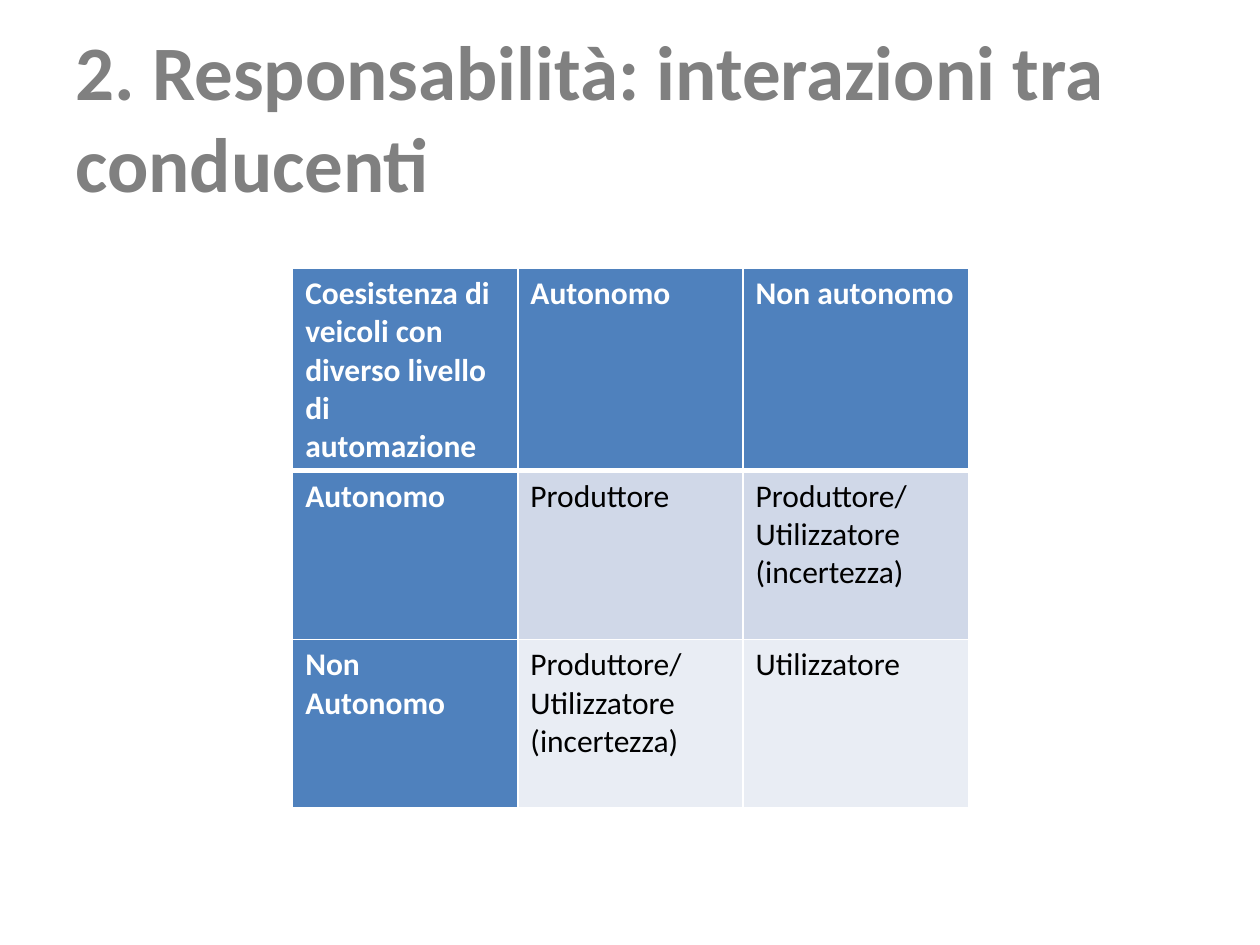
from dataclasses import dataclass

from lxml import etree
from pptx import Presentation
from pptx.dml.color import RGBColor
from pptx.enum.text import MSO_ANCHOR
from pptx.oxml.ns import qn
from pptx.util import Cm, Pt

MIDDLE = MSO_ANCHOR.MIDDLE

# Content
TITLE = "2. Responsabilità: interazioni tra conducenti"
ROWS = [
    ["Coesistenza di veicoli con diverso livello di automazione", "Autonomo", "Non autonomo"],
    ["Autonomo", "Produttore", "Produttore/\nUtilizzatore (incertezza)"],
    ["Non Autonomo", "Produttore/Utilizzatore (incertezza)", "Utilizzatore"],
]
COL_WIDTH = 4.54
ROW_HEIGHTS = [4.09, 3.4, 3.4]


@dataclass(frozen=True)
class Theme:
    font: str = "Calibri"
    title_size: int = 44
    cell_size: int = 18
    title: str = "808080"
    header_fill: str = "4F81BD"
    header_text: str = "FFFFFF"
    body_text: str = "000000"
    bands: tuple = ("D0D8E8", "E9EDF4")
    border: str = "FFFFFF"
    thin: int = 1
    thick: int = 3


THEME = Theme()


def format_text(tf, size, color, bold):
    for p in tf.paragraphs:
        for r in p.runs:
            r.font.name = THEME.font
            r.font.size = Pt(size)
            r.font.bold = bold
            r.font.color.rgb = RGBColor.from_string(color)


def set_borders(cell, top, bottom):
    tcPr = cell._tc.get_or_add_tcPr()
    widths = {"a:lnL": THEME.thin, "a:lnR": THEME.thin, "a:lnT": top, "a:lnB": bottom}
    for tag, width in widths.items():
        ln = etree.SubElement(tcPr, qn(tag), w=str(Pt(width)))
        fill = etree.SubElement(ln, qn("a:solidFill"))
        etree.SubElement(fill, qn("a:srgbClr"), val=THEME.border)


def add_title(s):
    sp = s.shapes.add_textbox(Cm(1.27), Cm(0.76), Cm(22.83), Cm(3.15))
    tf = sp.text_frame
    tf.word_wrap = True
    tf.vertical_anchor = MIDDLE
    tf.text = TITLE
    format_text(tf, THEME.title_size, THEME.title, True)


def add_matrix(s):
    n_cols = len(ROWS[0])
    frame = s.shapes.add_table(len(ROWS), n_cols, Cm(5.9), Cm(5.4),
                               Cm(COL_WIDTH * n_cols), Cm(sum(ROW_HEIGHTS)))
    table = frame.table
    for column in table.columns:
        column.width = Cm(COL_WIDTH)
    for row, height in zip(table.rows, ROW_HEIGHTS):
        row.height = Cm(height)

    for i, texts in enumerate(ROWS):
        for j, text in enumerate(texts):
            cell = table.cell(i, j)
            header = i == 0 or j == 0
            # A thick rule separates the header row from the body
            set_borders(cell, top=THEME.thick if i == 1 else THEME.thin,
                        bottom=THEME.thick if i == 0 else THEME.thin)
            cell.fill.solid()
            cell.fill.fore_color.rgb = RGBColor.from_string(
                THEME.header_fill if header else THEME.bands[i - 1])
            cell.text_frame.text = text
            format_text(cell.text_frame, THEME.cell_size,
                        THEME.header_text if header else THEME.body_text, header)


def main():
    prs = Presentation()
    prs.slide_width, prs.slide_height = Cm(25.4), Cm(19.05)
    s = prs.slides.add_slide(prs.slide_layouts[6])
    add_title(s)
    add_matrix(s)
    prs.save("out.pptx")


if __name__ == "__main__":
    main()
